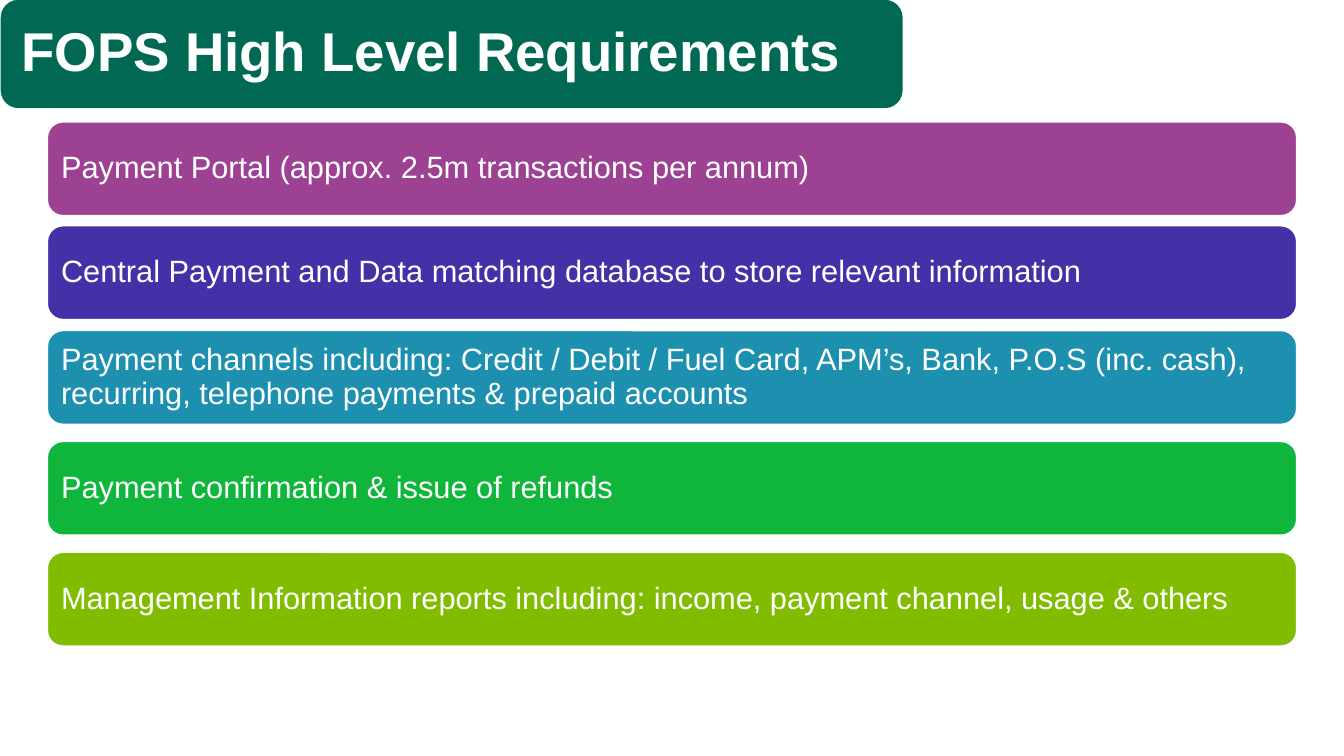
from pptx import Presentation
from pptx.dml.color import RGBColor
from pptx.enum.shapes import MSO_SHAPE
from pptx.enum.text import MSO_ANCHOR, PP_ALIGN
from pptx.util import Inches, Pt

ROUNDED = MSO_SHAPE.ROUNDED_RECTANGLE
MIDDLE = MSO_ANCHOR.MIDDLE
LEFT = PP_ALIGN.LEFT

WHITE = RGBColor(0xFE, 0xFF, 0xFF)
DARK_GREEN = RGBColor(0x00, 0x68, 0x53)
PURPLE = RGBColor(0x9D, 0x42, 0x92)
INDIGO = RGBColor(0x44, 0x30, 0xA7)
TEAL = RGBColor(0x1E, 0x90, 0xAF)
GREEN = RGBColor(0x0F, 0xB6, 0x3B)
LIME = RGBColor(0x81, 0xBC, 0x00)

# Top edge (inches), colour and wording of each requirement
REQUIREMENTS = [
    (1.21, PURPLE, "Payment Portal (approx. 2.5m transactions per annum)"),
    (2.24, INDIGO, "Central Payment and Data matching database to store relevant information"),
    (3.28, TEAL, "Payment channels including: Credit / Debit / Fuel Card, APM’s, Bank, "
                 "P.O.S (inc. cash), recurring, telephone payments & prepaid accounts"),
    (4.38, GREEN, "Payment confirmation & issue of refunds"),
    (5.48, LIME, "Management Information reports including: income, payment channel, "
                 "usage & others"),
]


def add_bar(slide, box, colour, wording, size, inset, bold=False):
    """Rounded bar with left-aligned white text, filling box (inches)."""
    bar = slide.shapes.add_shape(ROUNDED, *map(Inches, box))
    bar.shadow.inherit = False
    bar.fill.solid()
    bar.fill.fore_color.rgb = colour
    bar.line.color.rgb = WHITE
    bar.line.width = Pt(1)

    frame = bar.text_frame
    frame.word_wrap = True
    frame.vertical_anchor = MIDDLE
    frame.margin_left = frame.margin_right = Inches(inset)
    frame.margin_top = frame.margin_bottom = Inches(inset)

    paragraph = frame.paragraphs[0]
    paragraph.text = wording
    paragraph.alignment = LEFT
    paragraph.line_spacing = 0.9
    paragraph.font.name = "Arial"
    paragraph.font.size = Pt(size)
    paragraph.font.bold = bold
    paragraph.font.color.rgb = WHITE


def add_title(slide, box):
    add_bar(slide, box, DARK_GREEN, "FOPS High Level Requirements", 39, 0.16, bold=True)


def add_requirements(slide, left, width, bar_height):
    for top, colour, wording in REQUIREMENTS:
        add_bar(slide, (left, top, width, bar_height), colour, wording, 22, 0.09)


def main():
    prs = Presentation()
    prs.slide_width, prs.slide_height = Inches(13.33), Inches(7.5)
    slide = prs.slides.add_slide(prs.slide_layouts[6])
    slide.background.fill.solid()
    slide.background.fill.fore_color.rgb = WHITE

    add_title(slide, (0, -0.01, 8.96, 1.09))
    add_requirements(slide, 0.47, 12.39, 0.93)
    prs.save("out.pptx")


if __name__ == "__main__":
    main()
